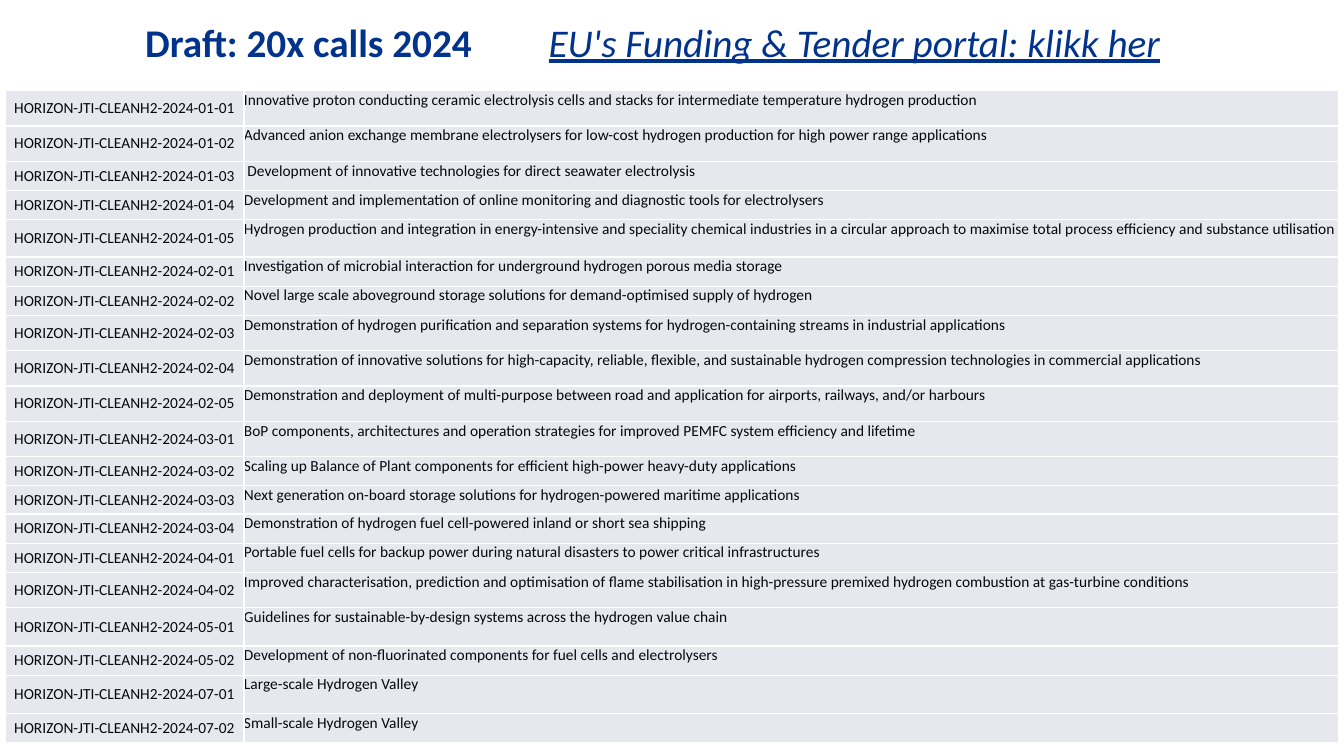
from dataclasses import dataclass
from typing import Optional

from lxml import etree
from pptx import Presentation
from pptx.dml.color import RGBColor
from pptx.enum import text
from pptx.oxml import ns
from pptx.util import Inches, Pt


@dataclass(frozen=True)
class Theme:
    font: str = "Calibri"
    heading: RGBColor = RGBColor(0x01, 0x33, 0x8C)
    link: RGBColor = RGBColor(0x01, 0x32, 0x8C)
    body: RGBColor = RGBColor(0x07, 0x08, 0x0B)
    cell: RGBColor = RGBColor(0xE7, 0xE8, 0xEE)
    border: RGBColor = RGBColor(0xFF, 0xFF, 0xFF)
    heading_size: int = 28
    body_size: int = 11


@dataclass(frozen=True)
class Call:
    topic: str
    subject: str
    height: float = 0.29


THEME = Theme()
TALL = 0.35
TALLEST = 0.38
CALL_PREFIX = "HORIZON-JTI-CLEANH2-2024-"
COLUMN_WIDTHS = (2.37, 10.86)

CALLS = [
    Call("01-01", "Innovative proton conducting ceramic electrolysis cells and stacks "
         "for intermediate temperature hydrogen production", TALL),
    Call("01-02", "Advanced anion exchange membrane electrolysers for low-cost hydrogen "
         "production for high power range applications", TALL),
    Call("01-03", " Development of innovative technologies for direct seawater electrolysis"),
    Call("01-04", "Development and implementation of online monitoring and diagnostic "
         "tools for electrolysers"),
    Call("01-05", "Hydrogen production and integration in energy-intensive and speciality "
         "chemical industries in a circular approach to maximise total process "
         "efficiency and substance utilisation", 0.37),
    Call("02-01", "Investigation of microbial interaction for underground hydrogen porous "
         "media storage"),
    Call("02-02", "Novel large scale aboveground storage solutions for demand-optimised "
         "supply of hydrogen"),
    Call("02-03", "Demonstration of hydrogen purification and separation systems for "
         "hydrogen-containing streams in industrial applications", TALL),
    Call("02-04", "Demonstration of innovative solutions for high-capacity, reliable, "
         "flexible, and sustainable hydrogen compression technologies in commercial "
         "applications", TALL),
    Call("02-05", "Demonstration and deployment of multi-purpose between road and "
         "application for airports, railways, and/or harbours", TALL),
    Call("03-01", "BoP components, architectures and operation strategies for improved "
         "PEMFC system efficiency and lifetime", TALL),
    Call("03-02", "Scaling up Balance of Plant components for efficient high-power "
         "heavy-duty applications"),
    Call("03-03", "Next generation on-board storage solutions for hydrogen-powered "
         "maritime applications", 0.28),
    Call("03-04", "Demonstration of hydrogen fuel cell-powered inland or short sea shipping"),
    Call("04-01", "Portable fuel cells for backup power during natural disasters to power "
         "critical infrastructures"),
    Call("04-02", "Improved characterisation, prediction and optimisation of flame "
         "stabilisation in high-pressure premixed hydrogen combustion at gas-turbine "
         "conditions", TALL),
    Call("05-01", "Guidelines for sustainable-by-design systems across the hydrogen "
         "value chain", TALLEST),
    Call("05-02", "Development of non-fluorinated components for fuel cells and electrolysers"),
    Call("07-01", "Large-scale Hydrogen Valley", TALLEST),
    Call("07-02", "Small-scale Hydrogen Valley"),
]


def add_run(paragraph, words: str, size: int, color: RGBColor,
            bold: Optional[bool] = None, emphasis: Optional[bool] = None) -> None:
    """Add a run; emphasis makes it both italic and underlined."""
    run = paragraph.add_run()
    run.text = words
    font = run.font
    font.name, font.size, font.bold = THEME.font, Pt(size), bold
    font.italic = font.underline = emphasis
    font.color.rgb = color


def add_borders(cell) -> None:
    properties = cell._tc.get_or_add_tcPr()
    for side in ("lnL", "lnR", "lnT", "lnB"):
        line = etree.SubElement(properties, ns.qn(f"a:{side}"), w=str(Pt(1)))
        fill = etree.SubElement(line, ns.qn("a:solidFill"))
        etree.SubElement(fill, ns.qn("a:srgbClr"), val=str(THEME.border))


def clear_margins(holder) -> None:
    holder.margin_left = holder.margin_right = 0
    holder.margin_top = holder.margin_bottom = 0


def fill_cell(cell, words: str, alignment, anchor) -> None:
    add_borders(cell)
    cell.fill.solid()
    cell.fill.fore_color.rgb = THEME.cell
    clear_margins(cell)
    cell.vertical_anchor = anchor
    paragraph = cell.text_frame.paragraphs[0]
    paragraph.alignment = alignment
    add_run(paragraph, words, THEME.body_size, THEME.body)


def add_calls_table(slide) -> None:
    calls_table = slide.shapes.add_table(
        len(CALLS), len(COLUMN_WIDTHS), Inches(0.05), Inches(0.9),
        Inches(sum(COLUMN_WIDTHS)), Inches(sum(call.height for call in CALLS))).table
    calls_table.first_row = calls_table.horz_banding = False
    for column, width in zip(calls_table.columns, COLUMN_WIDTHS):
        column.width = Inches(width)
    for row, call in zip(calls_table.rows, CALLS):
        row.height = Inches(call.height)
        code, subject = row.cells
        fill_cell(code, CALL_PREFIX + call.topic,
                  text.PP_ALIGN.CENTER, text.MSO_ANCHOR.MIDDLE)
        fill_cell(subject, call.subject, text.PP_ALIGN.LEFT, text.MSO_ANCHOR.TOP)


def write_heading(slide) -> None:
    heading = slide.shapes.title
    heading.left, heading.top = Inches(1.44), Inches(0.13)
    heading.width, heading.height = Inches(11.8), Inches(0.52)
    frame = heading.text_frame
    frame.auto_size = text.MSO_AUTO_SIZE.NONE
    frame.word_wrap = True
    frame.vertical_anchor = text.MSO_ANCHOR.BOTTOM
    clear_margins(frame)
    line = frame.paragraphs[0]
    tabs = etree.SubElement(line._p.get_or_add_pPr(), ns.qn("a:tabLst"))
    etree.SubElement(tabs, ns.qn("a:tab"), pos=str(Inches(4)), algn="l")
    line.alignment = text.PP_ALIGN.LEFT
    line.line_spacing = 0.9
    add_run(line, "Draft: 20x calls 2024 \t", THEME.heading_size, THEME.heading, bold=True)
    add_run(line, "EU's Funding & Tender portal: klikk her", THEME.heading_size,
            THEME.link, bold=False, emphasis=True)


def main() -> None:
    deck = Presentation()
    deck.slide_width, deck.slide_height = Inches(13.33), Inches(7.5)
    slide = deck.slides.add_slide(deck.slide_layouts.get_by_name("Title Only"))
    write_heading(slide)
    add_calls_table(slide)
    deck.save("out.pptx")


if __name__ == "__main__":
    main()
